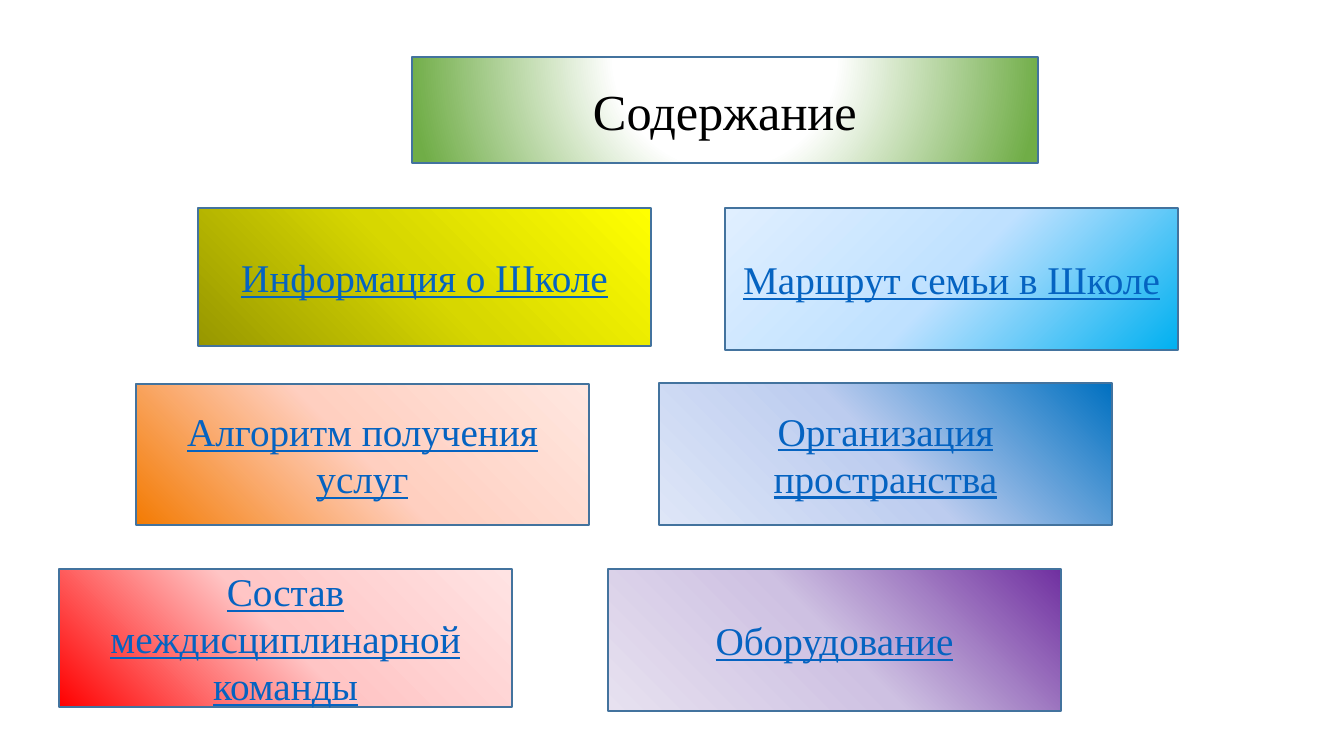
from lxml import etree
from pptx import Presentation
from pptx.dml.color import RGBColor
from pptx.enum.shapes import MSO_SHAPE
from pptx.enum.text import MSO_ANCHOR, MSO_AUTO_SIZE, PP_ALIGN
from pptx.oxml.ns import qn
from pptx.util import Pt

RECTANGLE = MSO_SHAPE.RECTANGLE
MIDDLE = MSO_ANCHOR.MIDDLE
CENTER = PP_ALIGN.CENTER
NO_AUTOFIT = MSO_AUTO_SIZE.NONE

EMU_PER_PX = 914400 / 100.8
FONT = "Times New Roman"
BLACK = RGBColor(0x00, 0x00, 0x00)
WHITE = RGBColor(0xFF, 0xFF, 0xFF)
GREEN = RGBColor(0x70, 0xAD, 0x47)
LINK_BLUE = RGBColor(0x05, 0x63, 0xC1)
OUTLINE = RGBColor(0x43, 0x73, 0x9E)
YELLOWS = RGBColor(0x97, 0x97, 0x00), RGBColor(0xD7, 0xD7, 0x00), RGBColor(0xFF, 0xFF, 0x00)
SKIES = RGBColor(0x00, 0xB0, 0xF0), RGBColor(0xBF, 0xE1, 0xFF), RGBColor(0xE0, 0xEF, 0xFF)
ORANGES = RGBColor(0xF3, 0x7B, 0x03), RGBColor(0xFF, 0xCF, 0xC0), RGBColor(0xFF, 0xE7, 0xE0)
BLUES = RGBColor(0x00, 0x70, 0xC0), RGBColor(0xBC, 0xCC, 0xEF), RGBColor(0xDE, 0xE6, 0xF7)
REDS = RGBColor(0xFF, 0x00, 0x00), RGBColor(0xFF, 0xC5, 0xC5), RGBColor(0xFF, 0xE3, 0xE3)
PURPLES = RGBColor(0x70, 0x30, 0xA0), RGBColor(0xCE, 0xC1, 0xE2), RGBColor(0xE7, 0xE1, 0xF0)

# Gradient directions: an angle, or the focus rectangle of a circular gradient
UP_RIGHT = 315
DOWN_LEFT = 135
FROM_CENTER = (50, -80, 50, 180)
FROM_BOTTOM_RIGHT = (100, 100, 0, 0)
FROM_TOP_RIGHT = (100, 0, 0, 100)


def px(length):
    return round(length * EMU_PER_PX)


def style_box(shape, text, size, color, stops, direction):
    # Gradient fill and outline
    shape.fill.gradient()
    gradient = shape._element.spPr.find(qn("a:gradFill"))
    gradient.clear()
    stop_list = etree.SubElement(gradient, qn("a:gsLst"))
    for percent, stop_color in stops:
        stop = etree.SubElement(stop_list, qn("a:gs"), pos=str(percent * 1000))
        etree.SubElement(stop, qn("a:srgbClr"), val=str(stop_color))
    if isinstance(direction, tuple):
        circle = etree.SubElement(gradient, qn("a:path"), path="circle")
        focus = {side: str(value * 1000) for side, value in zip("ltrb", direction)}
        etree.SubElement(circle, qn("a:fillToRect"), focus)
    else:
        etree.SubElement(gradient, qn("a:lin"), ang=str(direction * 60000), scaled="0")
    shape.line.color.rgb = OUTLINE
    shape.line.width = Pt(1)

    # Centred text
    text_frame = shape.text_frame
    text_frame.text = text
    text_frame.word_wrap = True
    text_frame.auto_size = NO_AUTOFIT
    text_frame.vertical_anchor = MIDDLE
    paragraph = text_frame.paragraphs[0]
    paragraph.alignment = CENTER
    font = paragraph.runs[0].font
    font.name = FONT
    font.size = Pt(size)
    font.color.rgb = color


presentation = Presentation()
presentation.slide_width = px(1344)
presentation.slide_height = px(756)
slide = presentation.slides.add_slide(presentation.slide_layouts[5])

# Title
title = slide.shapes.title
title.left, title.top, title.width, title.height = px(412), px(57), px(626), px(106)
style_box(title, "Содержание", 36, BLACK,
          [(0, WHITE), (35, WHITE), (100, GREEN)], FROM_CENTER)

# Contents: text, left, top, height, colours, gradient direction
BOX_WIDTH = 453
sections = [
    ("Информация о Школе", 198, 208, 138, YELLOWS, UP_RIGHT),
    ("Маршрут семьи в Школе", 725, 208, 142, SKIES, FROM_BOTTOM_RIGHT),
    ("Алгоритм получения услуг", 136, 384, 141, ORANGES, UP_RIGHT),
    ("Организация пространства", 659, 383, 142, BLUES, DOWN_LEFT),
    ("Состав междисциплинарной команды", 59, 569, 138, REDS, UP_RIGHT),
    ("Оборудование", 608, 569, 142, PURPLES, FROM_TOP_RIGHT),
]
for text, left, top, height, colors, direction in sections:
    box = slide.shapes.add_shape(RECTANGLE, px(left), px(top), px(BOX_WIDTH), px(height))
    box.shadow.inherit = False
    style_box(box, text, 28, LINK_BLUE, list(zip((0, 50, 100), colors)), direction)
    box.text_frame.paragraphs[0].runs[0].font.underline = True

presentation.save("out.pptx")
